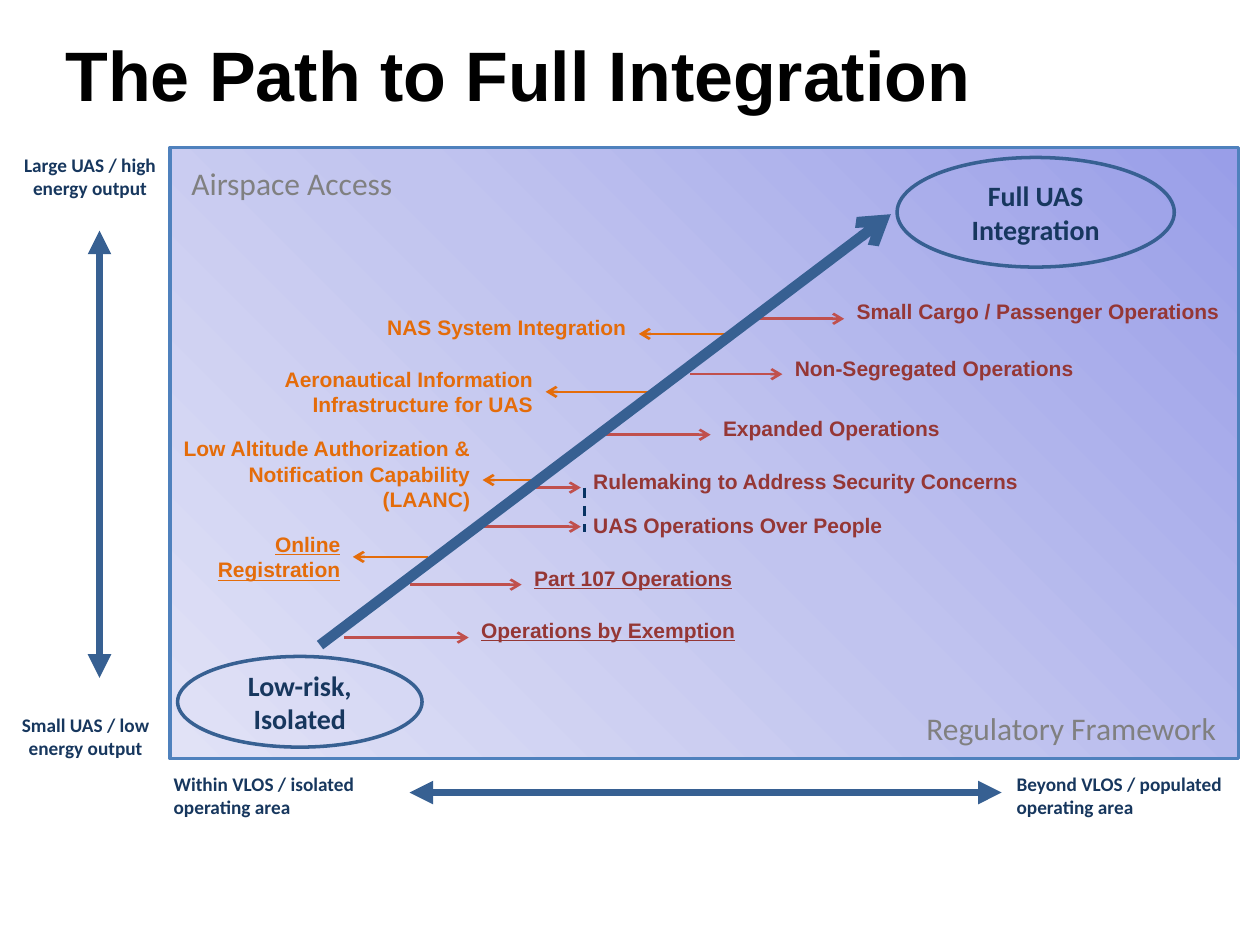
"""Build the slide that charts the path to full UAS integration."""
from lxml import etree
from pptx import Presentation
from pptx import util as u
from pptx.dml.color import RGBColor
from pptx.enum import dml, shapes, text
from pptx.oxml import ns

COLORS = {
    "black": "000000", "frame": "4F81BD", "blue": "376092", "navy": "17375E",
    "red_line": "C0504D", "red_text": "953735", "orange": "E46C0A",
    "gray": "808080", "dash": "073363",
    "gradient_dark": "999EE8", "gradient_mid": "C1C4EF", "gradient_light": "E1E2F6",
}
ALIGN = text.PP_ALIGN


def write_text(words, box=None, shape=None, size=12, font="Arial", color="black",
               bold=True, underline=None, align=ALIGN.LEFT, anchor=text.MSO_ANCHOR.TOP):
    if shape is None:
        shape = slide.shapes.add_textbox(*[u.Inches(length) for length in box])
    frame = shape.text_frame
    frame.word_wrap = True
    frame.vertical_anchor = anchor
    paragraph = frame.paragraphs[0]
    paragraph.alignment = align
    run = paragraph.add_run()
    run.text = words
    run.font.size = u.Pt(size)
    run.font.name = font
    run.font.bold = bold
    run.font.underline = underline
    run.font.color.rgb = RGBColor.from_string(COLORS[color])


def add_line(start, end, color, width=1.5, head=None, tail=None, dash=None):
    line = slide.shapes.add_connector(
        shapes.MSO_CONNECTOR.STRAIGHT, *[u.Inches(length) for length in start + end])
    line.line.color.rgb = RGBColor.from_string(COLORS[color])
    line.line.width = u.Pt(width)
    if dash:
        line.line.dash_style = dash
    outline = line.line._get_or_add_ln()
    for tag, arrow in (("a:headEnd", head), ("a:tailEnd", tail)):
        if arrow:
            etree.SubElement(outline, ns.qn(tag), type=arrow)
    etree.SubElement(line._element.spPr, ns.qn("a:effectLst"))


presentation = Presentation()
presentation.slide_width = u.Inches(10)
presentation.slide_height = u.Inches(7.5)
slide = presentation.slides.add_slide(presentation.slide_layouts[5])

title = slide.shapes.title
title.left, title.top = u.Inches(0.42), u.Inches(0.25)
title.width, title.height = u.Inches(9.27), u.Inches(0.67)
write_text("The Path to Full Integration", shape=title, size=40,
           anchor=text.MSO_ANCHOR.MIDDLE)

panel = slide.shapes.add_shape(
    shapes.MSO_SHAPE.RECTANGLE, u.Inches(1.35), u.Inches(1.17), u.Inches(8.48), u.Inches(4.85))
panel.shadow.inherit = False
panel.line.color.rgb = RGBColor.from_string(COLORS["frame"])
panel.line.width = u.Pt(2)
panel.fill.gradient()
gradient = panel._element.spPr.find(ns.qn("a:gradFill"))
for child in list(gradient):
    gradient.remove(child)
stops = etree.SubElement(gradient, ns.qn("a:gsLst"))
for percent, color in ((0, "gradient_dark"), (50, "gradient_mid"), (100, "gradient_light")):
    stop = etree.SubElement(stops, ns.qn("a:gs"), pos=str(percent * 1000))
    etree.SubElement(stop, ns.qn("a:srgbClr"), val=COLORS[color])
focus = etree.SubElement(gradient, ns.qn("a:path"), path="circle")
etree.SubElement(focus, ns.qn("a:fillToRect"), l="100000", b="100000")
etree.SubElement(gradient, ns.qn("a:tileRect"), t="-100000", r="-100000")

for words, box, align in (
    ("Within VLOS / isolated operating area", (1.28, 6.08, 2.2, 0.47), ALIGN.LEFT),
    ("Beyond VLOS / populated operating area", (7.97, 6.08, 2.03, 0.47), ALIGN.LEFT),
    ("Small UAS / low energy output", (0, 5.61, 1.36, 0.47), ALIGN.CENTER),
    ("Large UAS / high energy output", (0, 1.17, 1.43, 0.66), ALIGN.CENTER),
):
    write_text(words, box, size=11, font="Calibri", color="navy", align=align)

for start, end in (((3.25, 6.29), (7.95, 6.29)), ((0.79, 5.38), (0.79, 1.83))):
    add_line(start, end, "blue", width=4.5, head="triangle", tail="triangle")

for words, box in (
    ("Low-risk, Isolated", (1.41, 5.21, 1.94, 0.72)),
    ("Full UAS Integration", (7.12, 1.25, 2.2, 0.87)),
):
    oval = slide.shapes.add_shape(
        shapes.MSO_SHAPE.OVAL, *[u.Inches(length) for length in box])
    oval.shadow.inherit = False
    oval.fill.background()
    oval.line.color.rgb = RGBColor.from_string(COLORS["blue"])
    oval.line.width = u.Pt(2)
    write_text(words, shape=oval, size=16, font="Calibri", color="navy",
               align=ALIGN.CENTER, anchor=text.MSO_ANCHOR.MIDDLE)

for words, box, align in (
    ("Airspace Access", (1.42, 1.25, 2.62, 0.4), ALIGN.LEFT),
    ("Regulatory Framework", (6.7, 5.58, 3.05, 0.4), ALIGN.RIGHT),
):
    write_text(words, box, size=18, font="Calibri", color="gray", bold=False, align=align)

for words, start, tip, y, top, width, underline in (
    ("Operations by Exemption", 2.73, 3.72, 5.06, 4.85, 3.51, True),
    ("Part 107 Operations", 3.25, 4.14, 4.64, 4.44, 3.11, True),
    ("UAS Operations Over People", 3.83, 4.61, 4.18, 4.02, 3.39, None),
    ("Rulemaking to Address Security Concerns", 4.25, 4.61, 3.87, 3.67, 3.74, None),
    ("Expanded Operations", 4.81, 5.64, 3.45, 3.25, 3.06, None),
    ("Non-Segregated Operations", 5.48, 6.21, 2.97, 2.77, 3.44, None),
    ("Small Cargo / Passenger Operations", 6, 6.7, 2.53, 2.32, 3.3, None),
):
    add_line((start, y), (tip, y), "red_line", tail="arrow")
    write_text(words, (tip, top, width, 0.3), color="red_text", underline=underline)

for words, start, tip, y, top, width, height, underline in (
    ("Online Registration", 3.4, 2.8, 4.42, 4.17, 1.47, 0.5, True),
    ("Low Altitude Authorization & Notification Capability (LAANC)",
     4.25, 3.83, 3.81, 3.41, 2.5, 0.71, None),
    ("Aeronautical Information Infrastructure for UAS",
     5.25, 4.33, 3.11, 2.86, 2.9, 0.5, None),
    ("NAS System Integration", 5.86, 5.07, 2.65, 2.45, 2.9, 0.3, None),
):
    add_line((start, y), (tip, y), "orange", tail="arrow")
    write_text(words, (tip - width, top, width, height), color="orange",
               underline=underline, align=ALIGN.RIGHT)

add_line((2.54, 5.12), (7.07, 1.7), "blue", width=6, tail="arrow")
add_line((4.64, 3.87), (4.64, 4.22), "dash", dash=dml.MSO_LINE.DASH)

presentation.save("out.pptx")
